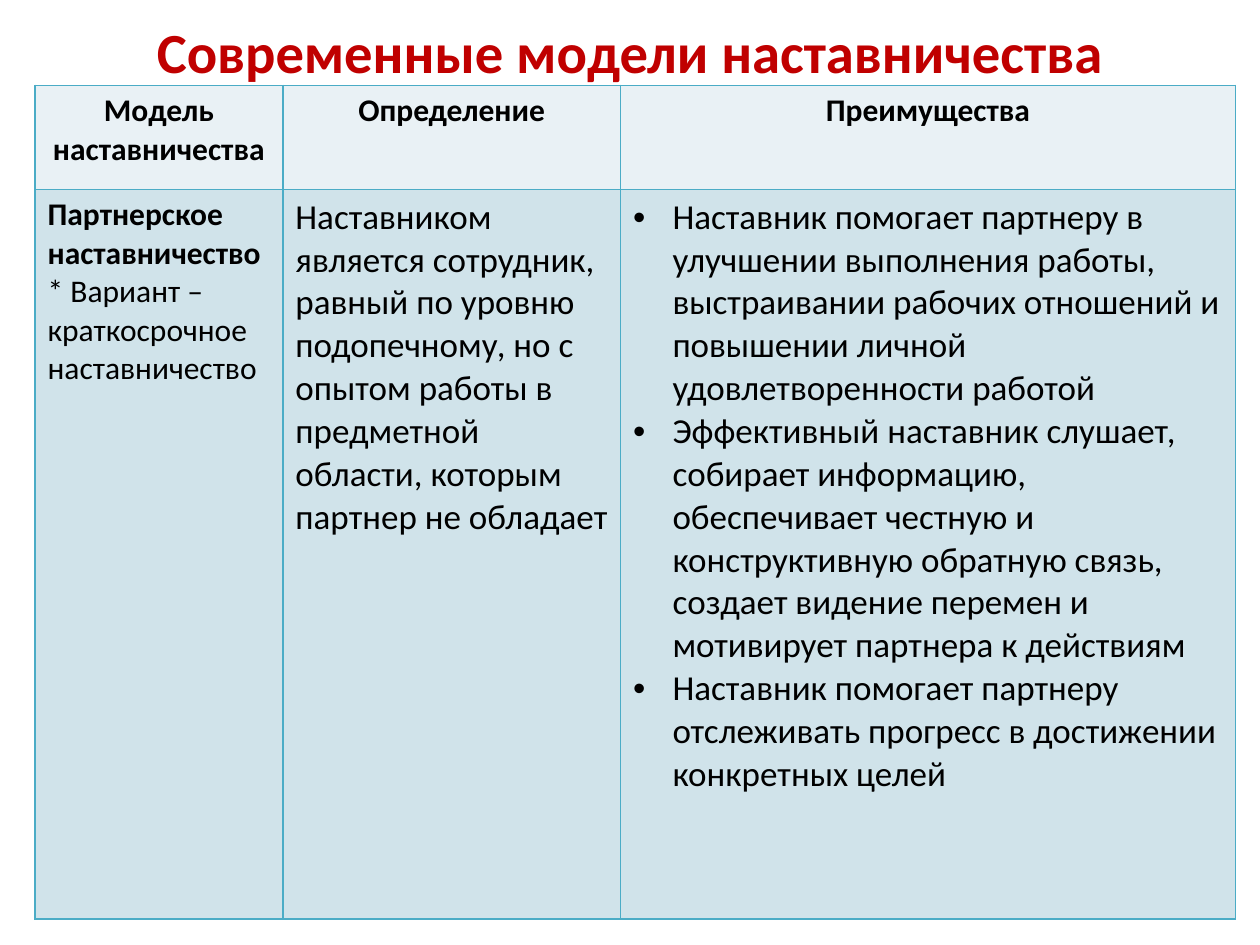
from lxml import etree
from pptx import Presentation
from pptx import util as u
from pptx.dml import color as c
from pptx.enum import text as t
from pptx.oxml import ns

COLORS = {"title": "C00000", "text": "000000", "border": "4BACC6",
          "header": "E9F1F5", "body": "D0E3EA"}


def add_element(parent, tag, **attributes):
    return etree.SubElement(parent, ns.qn(tag), attributes)


def write_text(paragraph, content, color, **font_format):
    run = paragraph.add_run()
    run.text = content
    run.font.color.rgb = c.RGBColor.from_string(COLORS[color])
    for name, value in {"name": "Calibri", **font_format}.items():
        setattr(run.font, name, value)


presentation = Presentation()
presentation.slide_width = u.Pt(720)
presentation.slide_height = u.Pt(540)
slide = presentation.slides.add_slide(presentation.slide_layouts[5])

title = slide.shapes.title
for name, value in {"left": 36, "top": 15, "width": 648, "height": 28}.items():
    setattr(title, name, u.Pt(value))
frame = title.text_frame
for name, value in {"vertical_anchor": t.MSO_ANCHOR.MIDDLE, "word_wrap": True,
                    "auto_size": t.MSO_AUTO_SIZE.NONE}.items():
    setattr(frame, name, value)
frame.paragraphs[0].alignment = t.PP_ALIGN.CENTER
write_text(frame.paragraphs[0], "Современные модели наставничества", "title",
           size=u.Pt(32.4), bold=True)

headings = ["Модель наставничества", "Определение", "Преимущества"]
model = ["Партнерское наставничество", "* Вариант –краткосрочное наставничество"]
definition = ["Наставником является сотрудник, равный по уровню подопечному, но с "
              "опытом работы в предметной области, которым партнер не обладает"]
advantages = [
    "Наставник помогает партнеру в улучшении выполнения работы, выстраивании "
    "рабочих отношений и повышении личной удовлетворенности работой",
    "Эффективный наставник слушает, собирает информацию, обеспечивает честную и "
    "конструктивную обратную связь, создает видение перемен и мотивирует "
    "партнера к действиям",
    "Наставник помогает партнеру отслеживать прогресс в достижении конкретных целей",
]
rows = [[[heading] for heading in headings], [model, definition, advantages]]
column_widths = [141.6, 193, 351.4]
row_heights = [59.5, 416.8]

table = slide.shapes.add_table(
    len(rows), len(column_widths), u.Pt(20), u.Pt(48.8),
    u.Pt(sum(column_widths)), u.Pt(sum(row_heights))).table
for column, width in zip(table.columns, column_widths):
    column.width = u.Pt(width)
for row, height in zip(table.rows, row_heights):
    row.height = u.Pt(height)

for row_index, row in enumerate(rows):
    is_header = row_index == 0
    for column_index, paragraphs in enumerate(row):
        cell = table.cell(row_index, column_index)
        properties = cell._tc.get_or_add_tcPr()
        for side in ("a:lnL", "a:lnR", "a:lnT", "a:lnB"):
            line = add_element(properties, side, w=str(u.Pt(1)))
            fill = add_element(line, "a:solidFill")
            add_element(fill, "a:srgbClr", val=COLORS["border"])
        cell.fill.solid()
        cell.fill.fore_color.rgb = c.RGBColor.from_string(
            COLORS["header" if is_header else "body"])

        size = 18 if is_header or column_index == 0 else 20
        for index, content in enumerate(paragraphs):
            frame = cell.text_frame
            paragraph = frame.paragraphs[0] if index == 0 else frame.add_paragraph()
            paragraph.alignment = t.PP_ALIGN.CENTER if is_header else t.PP_ALIGN.LEFT
            if paragraphs is advantages:
                indent = u.Pt(22.5)
                settings = paragraph._p.get_or_add_pPr()
                settings.set("marL", str(indent))
                settings.set("indent", str(-indent))
                add_element(settings, "a:buFont", typeface="Arial")
                add_element(settings, "a:buChar", char="•")
            is_bold = is_header or (column_index == 0 and index == 0)
            write_text(paragraph, content, "text", size=u.Pt(size), bold=is_bold)

presentation.save("out.pptx")
